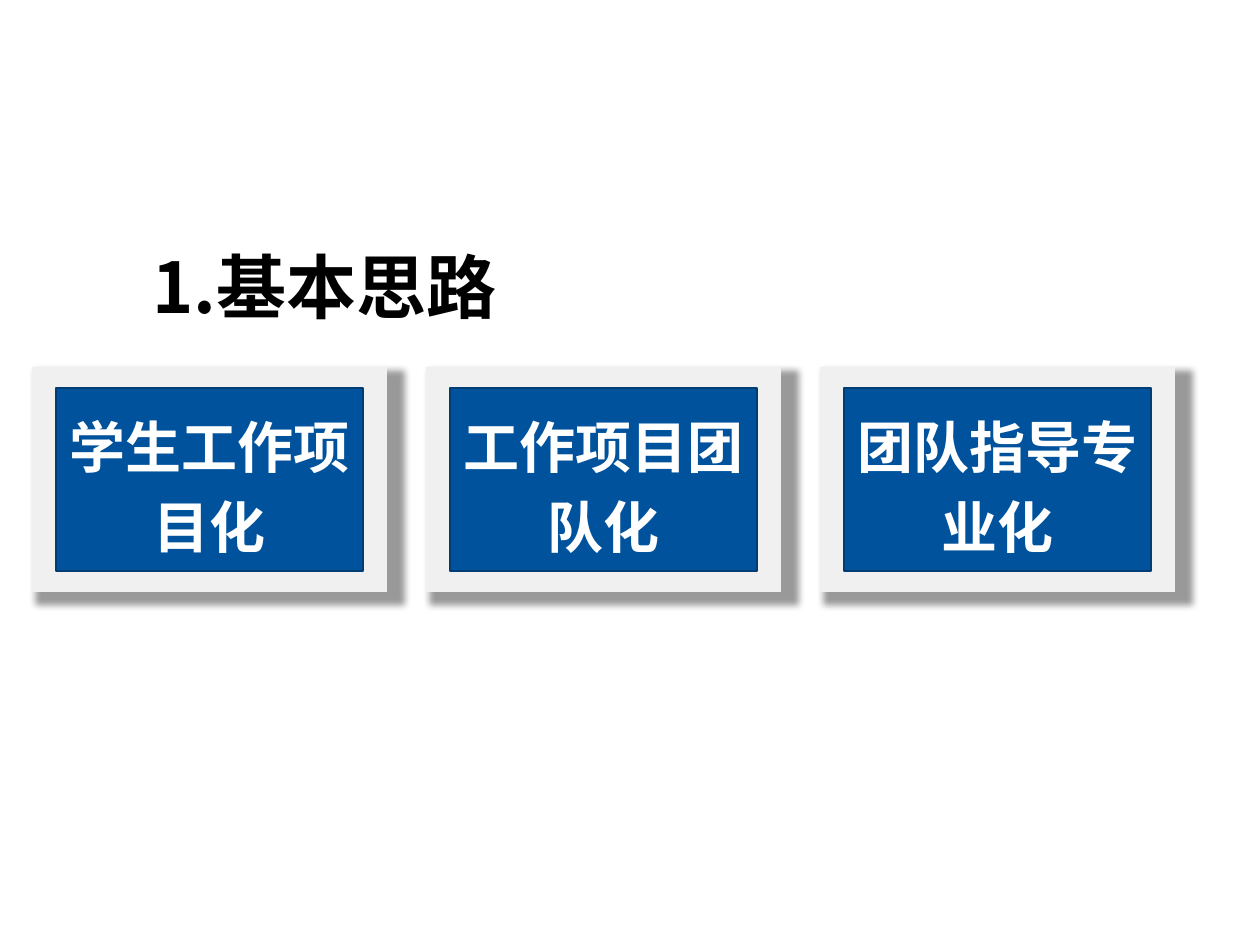
"""Build the slide on the basic approach: a heading above three framed principles."""
from dataclasses import dataclass

from lxml.etree import SubElement
from pptx import Presentation
from pptx.dml.color import RGBColor as RGB
from pptx.enum.shapes import MSO_SHAPE as SHAPE
from pptx.enum.text import MSO_ANCHOR as ANCHOR, PP_ALIGN as ALIGN
from pptx.oxml.ns import qn
from pptx.util import Emu, Pt


@dataclass(frozen=True)
class Theme:
    font: str = "Noto Sans CJK SC"
    heading_size: int = 40
    principle_size: int = 32
    ink: str = "000000"
    paper: str = "FFFFFF"
    frame: str = "F0F0F0"
    panel: str = "00529C"
    edge: str = "003D73"


theme = Theme()
PX = 914400 // 126


def write(shape, wording, size, color):
    frame = shape.text_frame
    frame.word_wrap = True
    frame.vertical_anchor = ANCHOR.MIDDLE
    paragraph = frame.paragraphs[0]
    paragraph.alignment = ALIGN.CENTER
    paragraph.line_spacing = 1.2
    run = paragraph.add_run()
    run.text = wording
    run.font.size = Pt(size)
    run.font.bold = True
    run.font.color.rgb = RGB.from_string(color)
    run.font.name = theme.font
    SubElement(run.font._element, qn("a:ea"), typeface=theme.font)


def cast_shadow(shape):
    effects = SubElement(shape._element.spPr, qn("a:effectLst"))
    shadow = SubElement(effects, qn("a:outerShdw"), blurRad=str(Pt(4)), dist=str(Pt(3)),
                        dir="2700000", sx="104000", sy="104000", algn="tl", rotWithShape="0")
    tint = SubElement(shadow, qn("a:srgbClr"), val=theme.ink)
    SubElement(tint, qn("a:alpha"), val="40000")


deck = Presentation()
deck.slide_width, deck.slide_height = Emu(1260 * PX), Emu(945 * PX)
slide = deck.slides.add_slide(deck.slide_layouts[6])
slide.background.fill.solid()
slide.background.fill.fore_color.rgb = RGB.from_string(theme.paper)

heading = slide.shapes.add_textbox(32 * PX, 207 * PX, 585 * PX, 140 * PX)
write(heading, "1.基本思路", theme.heading_size, theme.ink)

FIRST_LEFT, PITCH = 32, 394
principles = ["学生工作项目化", "工作项目团队化", "团队指导专业化"]
for index, principle in enumerate(principles):
    left = FIRST_LEFT + index * PITCH

    border = slide.shapes.add_shape(SHAPE.RECTANGLE, left * PX, 367 * PX, 355 * PX, 225 * PX)
    border.fill.solid()
    border.fill.fore_color.rgb = RGB.from_string(theme.frame)
    border.line.fill.background()
    cast_shadow(border)

    panel = slide.shapes.add_shape(
        SHAPE.RECTANGLE, (left + 24) * PX, 388 * PX, 307 * PX, 183 * PX)
    panel.shadow.inherit = False
    panel.fill.solid()
    panel.fill.fore_color.rgb = RGB.from_string(theme.panel)
    panel.line.color.rgb = RGB.from_string(theme.edge)
    panel.line.width = Pt(1)
    write(panel, principle, theme.principle_size, theme.paper)

deck.save("out.pptx")
